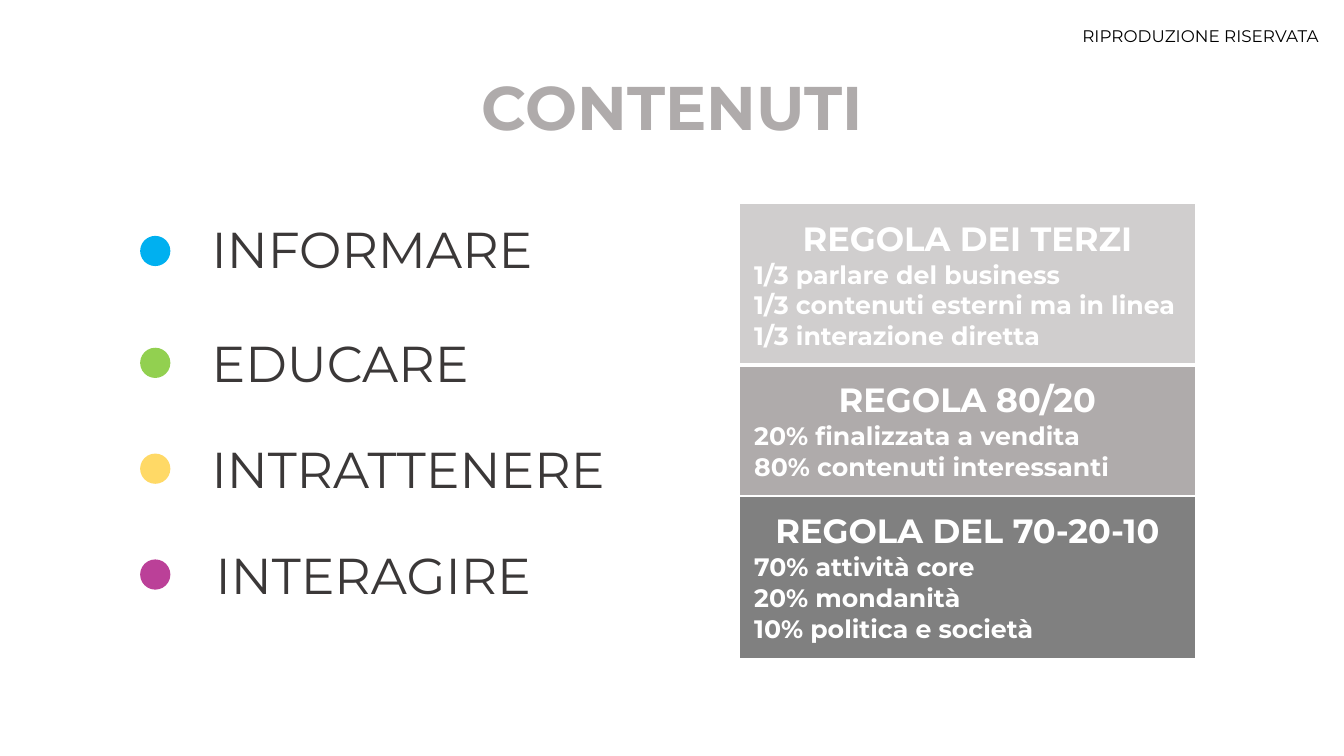
from lxml.etree import SubElement
from pptx import Presentation
from pptx.dml.color import RGBColor
from pptx.enum.shapes import MSO_SHAPE as SHAPE
from pptx.enum.text import MSO_ANCHOR as ANCHOR, MSO_AUTO_SIZE as AUTO, PP_ALIGN as ALIGN
from pptx.oxml.ns import qn
from pptx.util import Inches, Pt

FONT = "Montserrat"
COLORS = {
    "white": "FFFFFF", "black": "000000", "text": "3B3838",
    "blue": "00B0F0", "green": "92D050", "yellow": "FFD966", "purple": "BB4098",
    "light": "D0CECE", "mid": "AFABAB", "dark": "808080",
}
GOALS = [
    ("INFORMARE", "blue", 2, 2.11, 2.34),
    ("EDUCARE", "green", 2, 3.25, 3.45),
    ("INTRATTENERE", "yellow", 2, 4.3, 4.5),
    ("INTERAGIRE", "purple", 2.04, 5.35, 5.55),
]
RULES = [
    ("REGOLA DEI TERZI", ["1/3 parlare del business", "1/3 contenuti esterni ma in linea",
                          "1/3 interazione diretta"], "light", 1.6, 1, 3),
    ("REGOLA 80/20", ["20% finalizzata a vendita", "80% contenuti interessanti"],
     "mid", 1.29, 3, 1),
    ("REGOLA DEL 70-20-10", ["70% attività core", "20% mondanità",
                             "10% politica e società"], "dark", 1.61, 1, 1),
]


def rgb(name):
    return RGBColor.from_string(COLORS[name])


def write(p, text, size, color, bold=False, align=ALIGN.LEFT):
    p.text = text
    p.alignment = align
    font = p.runs[0].font
    font.name, font.size, font.bold = FONT, Pt(size), bold
    font.color.rgb = rgb(color)


def add_text(s, box, text, size, color, align=ALIGN.LEFT):
    tf = s.shapes.add_textbox(*map(Inches, box)).text_frame
    tf.word_wrap = True
    write(tf.paragraphs[0], text, size, color, align=align)


def add_title(s, box, text):
    title = s.shapes.title
    title.left, title.top, title.width, title.height = map(Inches, box)
    tf = title.text_frame
    tf.auto_size = AUTO.NONE
    tf.vertical_anchor = ANCHOR.MIDDLE
    write(tf.paragraphs[0], text, 44, "mid", True, ALIGN.CENTER)


def add_goals(s, left, dot_size):
    for text, color, text_left, text_top, dot_top in GOALS:
        dot = s.shapes.add_shape(SHAPE.OVAL, Inches(left), Inches(dot_top),
                                 Inches(dot_size), Inches(dot_size))
        dot.shadow.inherit = False
        dot.fill.solid()
        dot.fill.fore_color.rgb = rgb(color)
        dot.line.fill.background()
        add_text(s, (text_left, text_top, 10.35, 0.71), text, 36, "text")


def set_borders(cell, top, bottom):
    tcPr = cell._tc.get_or_add_tcPr()
    for side, width in (("L", 1), ("R", 1), ("T", top), ("B", bottom)):
        ln = SubElement(tcPr, qn(f"a:ln{side}"), w=str(Pt(width)))
        fill = SubElement(ln, qn("a:solidFill"))
        SubElement(fill, qn("a:srgbClr"), val=COLORS["white"])


def add_rules(s, box):
    table = s.shapes.add_table(len(RULES), 1, *map(Inches, box)).table
    for i, (heading, lines, color, height, top, bottom) in enumerate(RULES):
        table.rows[i].height = Inches(height)
        cell = table.cell(i, 0)
        cell.margin_left = cell.margin_right = Inches(0.15)
        cell.margin_top = cell.margin_bottom = Inches(0.15)
        set_borders(cell, top, bottom)
        cell.fill.solid()
        cell.fill.fore_color.rgb = rgb(color)
        tf = cell.text_frame
        write(tf.paragraphs[0], heading, 24, "white", True, ALIGN.CENTER)
        for line in lines:
            write(tf.add_paragraph(), line, 18, "white", True)


def main():
    prs = Presentation()
    prs.slide_width, prs.slide_height = Inches(13.33), Inches(7.5)
    s = prs.slides.add_slide(prs.slide_layouts[5])
    add_title(s, (1.07, 0.63, 11.19, 0.84), "CONTENUTI")
    add_goals(s, 1.39, 0.3)
    add_rules(s, (7.33, 2.02, 4.53, 4.5))
    add_text(s, (9.28, 0.21, 3.9, 0.3), "RIPRODUZIONE RISERVATA", 12, "black", ALIGN.RIGHT)
    prs.save("out.pptx")


if __name__ == "__main__":
    main()
